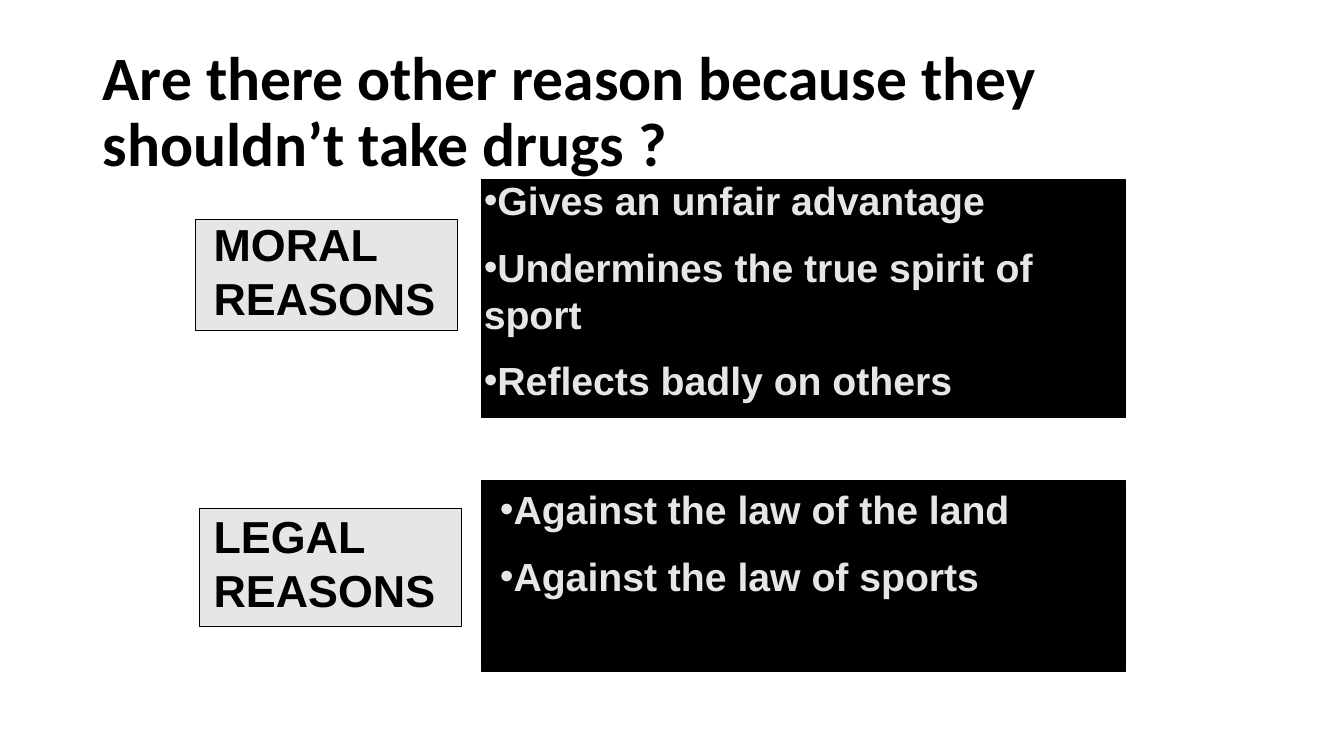
from lxml.etree import SubElement
from pptx import Presentation
from pptx.dml.color import RGBColor
from pptx.enum.shapes import MSO_SHAPE
from pptx.enum.text import MSO_ANCHOR, MSO_AUTO_SIZE
from pptx.oxml.ns import qn
from pptx.util import Pt

PX = 9144  # 100 px to the inch
BLACK = RGBColor(0x00, 0x00, 0x00)
GREY = RGBColor(0xE7, 0xE6, 0xE6)


def write(para, text, font="Arial", size=28, color=BLACK, bold=True):
    span = para.add_run()
    span.text = text
    span.font.name = font
    span.font.size = Pt(size)
    span.font.bold = bold
    span.font.color.rgb = color


class Page:
    def __init__(self, deck):
        self.shapes = deck.slides.add_slide(deck.slide_layouts[6]).shapes

    def panel(self, area, fill):
        box = self.shapes.add_shape(MSO_SHAPE.RECTANGLE, *(n * PX for n in area))
        box.shadow.inherit = False
        box.fill.solid()
        box.fill.fore_color.rgb = fill
        box.line.color.rgb = BLACK
        box.line.width = Pt(0.75)

    def text(self, area, lines, bullet=None, anchor=MSO_ANCHOR.TOP,
             spacing=None, grow=True, **style):
        frame = self.shapes.add_textbox(*(n * PX for n in area)).text_frame
        frame.word_wrap = True
        frame.vertical_anchor = anchor
        if grow:
            frame.auto_size = MSO_AUTO_SIZE.SHAPE_TO_FIT_TEXT
        for index, line in enumerate(lines):
            para = frame.add_paragraph() if index else frame.paragraphs[0]
            para.line_spacing = spacing
            if index:
                para.space_before = Pt(14)
            if bullet:
                properties = para._p.get_or_add_pPr()
                SubElement(properties, qn("a:buFont"), typeface="Arial")
                SubElement(properties, qn("a:buChar"), char=bullet)
            write(para, line, **style)


def main():
    deck = Presentation()
    deck.slide_width, deck.slide_height = 1333 * PX, 750 * PX
    page = Page(deck)

    page.text((92, 40, 1150, 145),
              ["Are there other reason because they shouldn’t take drugs ?"],
              anchor=MSO_ANCHOR.MIDDLE, spacing=0.9, grow=False,
              font="Calibri", size=44)

    sections = [
        ("MORAL REASONS", (194, 218, 260, 110), (202, 210, 252, 117),
         (478, 178, 638, 236), (470, 170, 622, 244),
         ["Gives an unfair advantage",
          "Undermines the true spirit of sport",
          "Reflects badly on others"]),
        ("LEGAL REASONS", (198, 504, 260, 118), (202, 500, 252, 117),
         (478, 477, 638, 189), (486, 477, 622, 197),
         ["Against the law of the land",
          "Against the law of sports"]),
    ]
    for heading, label, label_text, panel, panel_text, reasons in sections:
        page.panel(label, GREY)
        page.text(label_text, [heading], size=32)
        page.panel(panel, BLACK)
        page.text(panel_text, reasons, bullet="•", color=GREY)

    deck.save("out.pptx")


if __name__ == "__main__":
    main()
